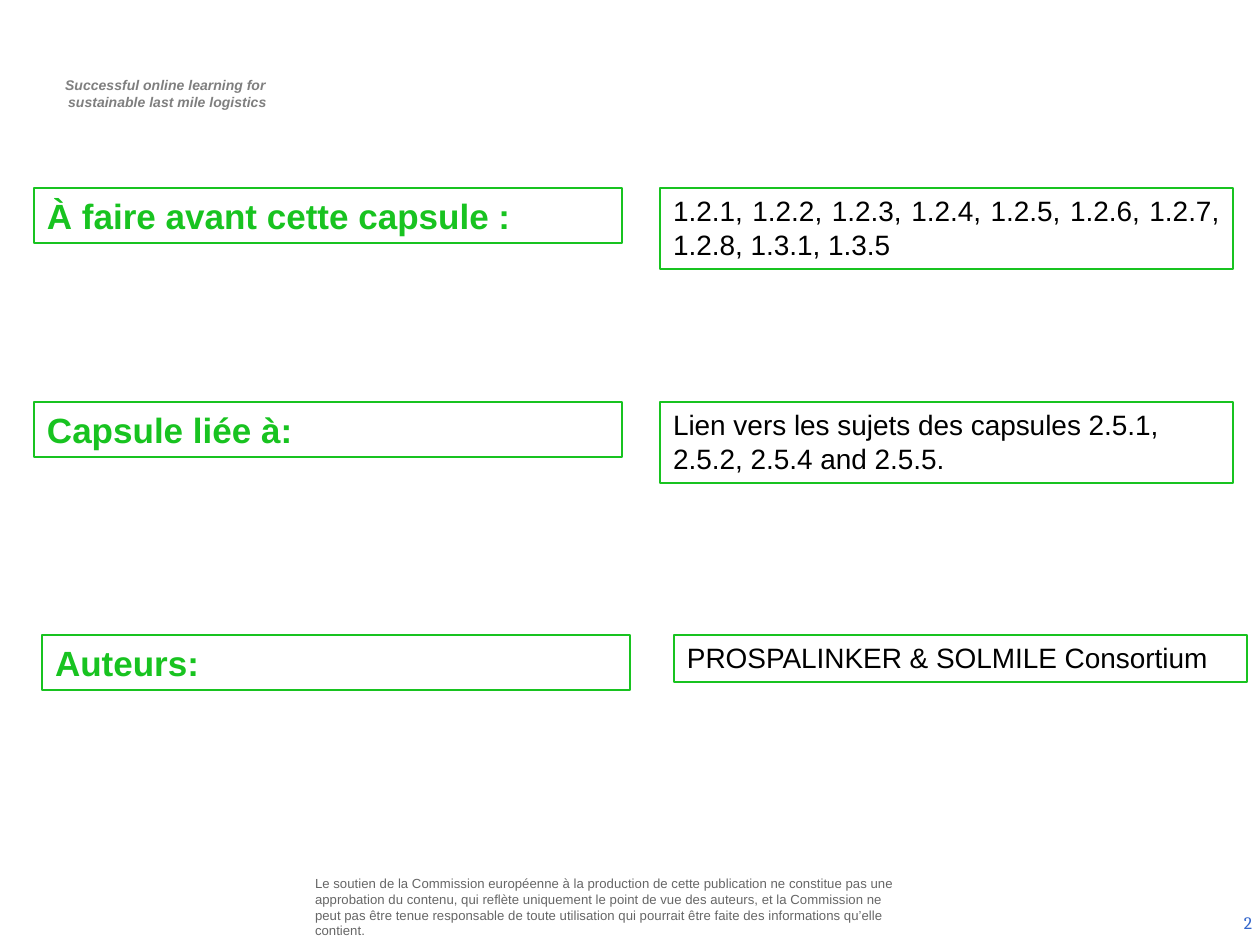
from dataclasses import dataclass

from pptx import Presentation
from pptx.dml.color import RGBColor
from pptx.enum.shapes import MSO_SHAPE
from pptx.enum.text import MSO_ANCHOR, MSO_AUTO_SIZE, PP_ALIGN
from pptx.util import Emu, Pt

RECT = MSO_SHAPE.RECTANGLE
TOP, MIDDLE = MSO_ANCHOR.TOP, MSO_ANCHOR.MIDDLE
LEFT, CENTER, RIGHT, JUSTIFY = PP_ALIGN.LEFT, PP_ALIGN.CENTER, PP_ALIGN.RIGHT, PP_ALIGN.JUSTIFY
GROW, FIXED = MSO_AUTO_SIZE.SHAPE_TO_FIT_TEXT, MSO_AUTO_SIZE.NONE
EMU_PER_PX = 914400 / 126


def px(n):
    return Emu(round(n * EMU_PER_PX))


@dataclass(frozen=True)
class Style:
    font: str
    size: float
    color: str
    bold: bool = False
    italic: bool = False


class Theme:
    white = "FFFFFF"
    border = "18C320"
    border_width = 0.75
    tagline = Style("Arial", 8, "7F7F7F", bold=True, italic=True)
    disclaimer = Style("Arial", 7.5, "666666")
    number = Style("Cambria", 10, "3366CC")
    label = Style("Arial", 20, border, bold=True)
    value = Style("Arial", 16, "000000")


class SlideBuilder:
    def __init__(self, s, theme):
        self.s = s
        self.theme = theme

    def fill_text(self, sp, lines, style, align=LEFT, anchor=TOP, pad=(13, 6), fit=FIXED, margin=0):
        tf = sp.text_frame
        tf.word_wrap = True
        tf.auto_size = fit
        tf.vertical_anchor = anchor
        tf.margin_left = tf.margin_right = px(pad[0])
        tf.margin_top = tf.margin_bottom = px(pad[1])
        for i, line in enumerate(lines):
            p = tf.add_paragraph() if i else tf.paragraphs[0]
            p.alignment = align
            if margin:
                p._p.get_or_add_pPr().set("marL", str(px(margin)))
            r = p.add_run()
            r.text = line
            r.font.name = style.font
            r.font.size = Pt(style.size)
            r.font.bold = style.bold
            r.font.italic = style.italic
            r.font.color.rgb = RGBColor.from_string(style.color)

    def text(self, x, y, w, h, lines, style, **options):
        sp = self.s.shapes.add_textbox(px(x), px(y), px(w), px(h))
        self.fill_text(sp, lines, style, **options)

    def box(self, x, y, w, h, line, style, align=LEFT):
        sp = self.s.shapes.add_shape(RECT, px(x), px(y), px(w), px(h))
        sp.shadow.inherit = False
        sp.fill.solid()
        sp.fill.fore_color.rgb = RGBColor.from_string(self.theme.white)
        sp.line.color.rgb = RGBColor.from_string(self.theme.border)
        sp.line.width = Pt(self.theme.border_width)
        self.fill_text(sp, [line], style, align=align, fit=GROW)


def main():
    prs = Presentation()
    prs.slide_width, prs.slide_height = px(1260), px(945)
    theme = Theme()
    slide = SlideBuilder(prs.slides.add_slide(prs.slide_layouts[6]), theme)

    slide.text(37, 71, 256, 47,
               ["Successful online learning for ", "sustainable last mile logistics"],
               theme.tagline, align=CENTER, fit=GROW, margin=5)
    slide.text(310, 876, 596, 62,
               ["Le soutien de la Commission européenne à la production de cette publication "
                "ne constitue pas une approbation du contenu, qui reflète uniquement le point "
                "de vue des auteurs, et la Commission ne peut pas être tenue responsable de "
                "toute utilisation qui pourrait être faite des informations qu’elle contient."],
               theme.disclaimer, anchor=MIDDLE, pad=(5, 5))
    slide.text(971, 898, 294, 50, ["2"], theme.number, align=RIGHT, anchor=MIDDLE)

    rows = [
        (188, 34, "À faire avant cette capsule :", 660, 81,
         "1.2.1, 1.2.2, 1.2.3, 1.2.4, 1.2.5, 1.2.6, 1.2.7, 1.2.8, 1.3.1, 1.3.5 ", JUSTIFY),
        (402, 34, "Capsule liée à:", 660, 81,
         "Lien vers les sujets des capsules 2.5.1, 2.5.2, 2.5.4 and 2.5.5.", LEFT),
        (635, 42, "Auteurs:", 674, 47, "PROSPALINKER & SOLMILE Consortium", LEFT),
    ]
    for y, label_x, label, value_x, value_h, value, align in rows:
        slide.box(label_x, y, 588, 55, label, theme.label)
        slide.box(value_x, y, 573, value_h, value, theme.value, align)

    prs.save("out.pptx")


if __name__ == "__main__":
    main()
